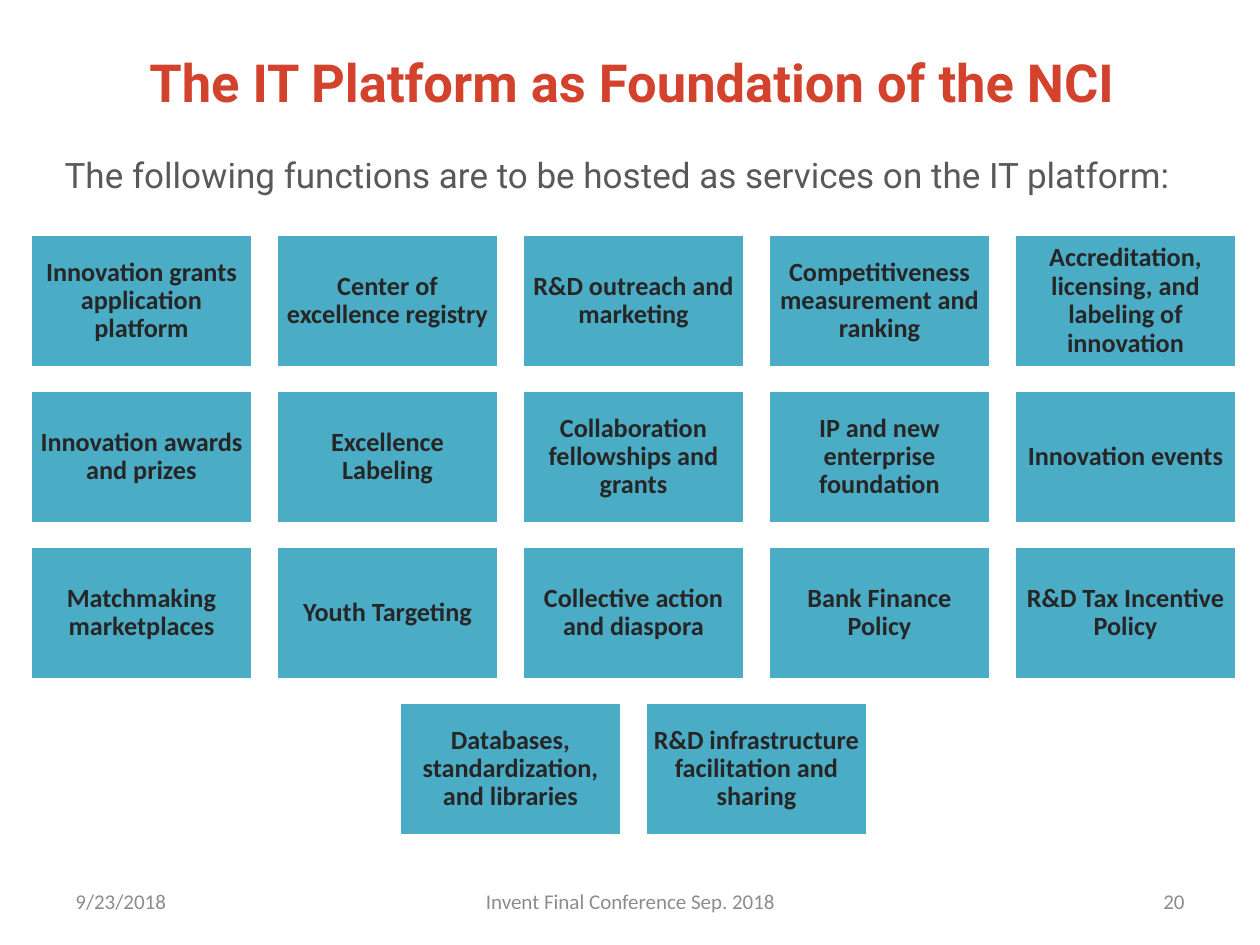
from lxml.etree import SubElement
from pptx import Presentation
from pptx.dml.color import RGBColor
from pptx.enum.shapes import MSO_SHAPE
from pptx.enum.text import MSO_ANCHOR, MSO_AUTO_SIZE, PP_ALIGN
from pptx.oxml.ns import qn
from pptx.util import Pt

TITLE = "The IT Platform as Foundation of the NCI"
INTRO = "The following functions are to be hosted as services on the IT platform:"
SERVICE_ROWS = [
    ["Innovation grants application platform", "Center of excellence registry",
     "R&D outreach and marketing", "Competitiveness measurement and ranking",
     "Accreditation, licensing, and labeling of innovation"],
    ["Innovation awards and prizes", "Excellence Labeling",
     "Collaboration fellowships and grants", "IP and new enterprise foundation",
     "Innovation events"],
    ["Matchmaking marketplaces", "Youth Targeting", "Collective action and diaspora",
     "Bank Finance Policy", "R&D Tax Incentive Policy"],
    ["Databases, standardization, and libraries",
     "R&D infrastructure facilitation and sharing"],
]
FOOTERS = [
    ("20", 903, 294, PP_ALIGN.RIGHT),
    ("Invent Final Conference Sep. 2018", 431, 399, PP_ALIGN.CENTER),
    ("9/23/2018", 63, 294, PP_ALIGN.LEFT),
]

RED = RGBColor(0xD2, 0x42, 0x2C)
GRAY = RGBColor(0x59, 0x59, 0x59)
LIGHT_GRAY = RGBColor(0x8C, 0x8C, 0x8C)
DARK = RGBColor(0x26, 0x26, 0x26)
TEAL = RGBColor(0x4B, 0xAC, 0xC6)
WHITE = RGBColor(0xFF, 0xFF, 0xFF)

EMU_PER_PX = 914400 / 126
GRID_LEFT, GRID_TOP = 30, 234
TILE_WIDTH, TILE_HEIGHT = 223, 134
COLUMN_STEP, ROW_STEP = 246, 156
TILE_INSET = 8


def px(length):
    return round(length * EMU_PER_PX)


def place(shape, left, top, width, height):
    shape.left, shape.top = px(left), px(top)
    shape.width, shape.height = px(width), px(height)


def write_text(shape, text, size, color, font="Calibri", bold=False,
               align=PP_ALIGN.CENTER, anchor=MSO_ANCHOR.MIDDLE,
               inset=None, line_spacing=None, space_before=0):
    frame = shape.text_frame
    frame.word_wrap = True
    frame.auto_size = MSO_AUTO_SIZE.NONE
    frame.vertical_anchor = anchor
    if inset is not None:
        frame.margin_left = frame.margin_right = px(inset)
        frame.margin_top = frame.margin_bottom = px(inset)
    paragraph = frame.paragraphs[0]
    paragraph.alignment = align
    paragraph.line_spacing = line_spacing
    paragraph.space_before = Pt(space_before)
    run = paragraph.add_run()
    run.text = text
    run.font.name = font
    run.font.size = Pt(size)
    run.font.bold = bold
    run.font.color.rgb = color
    return paragraph


def remove_bullet(paragraph):
    properties = paragraph._p.get_or_add_pPr()
    properties.set("marL", "0")
    properties.set("indent", "0")
    SubElement(properties, qn("a:buNone"))


def add_tile(shapes, text, left, top):
    tile = shapes.add_shape(MSO_SHAPE.RECTANGLE, px(left), px(top),
                            px(TILE_WIDTH), px(TILE_HEIGHT))
    tile.shadow.inherit = False
    tile.fill.solid()
    tile.fill.fore_color.rgb = TEAL
    tile.line.color.rgb = WHITE
    tile.line.width = Pt(2)
    write_text(tile, text, 15, DARK, bold=True, inset=TILE_INSET, line_spacing=0.9)


def main():
    presentation = Presentation()
    presentation.slide_width, presentation.slide_height = px(1260), px(945)
    slide = presentation.slides.add_slide(presentation.slide_layouts[1])

    title, body = slide.shapes.title, slide.placeholders[1]
    place(title, 50, 44, 1164, 102)
    write_text(title, TITLE, 30, RED, font="Roboto", bold=True, anchor=MSO_ANCHOR.TOP)
    place(body, 52, 147, 1163, 687)
    remove_bullet(write_text(body, INTRO, 20, GRAY, font="Roboto", align=PP_ALIGN.JUSTIFY,
                             anchor=MSO_ANCHOR.TOP, space_before=6))

    tiles = slide.shapes.add_group_shape().shapes
    columns = max(len(services) for services in SERVICE_ROWS)
    for row, services in enumerate(SERVICE_ROWS):
        row_left = GRID_LEFT + (columns - len(services)) * COLUMN_STEP / 2
        for column, service in enumerate(services):
            add_tile(tiles, service, row_left + column * COLUMN_STEP,
                     GRID_TOP + row * ROW_STEP)

    for text, left, width, align in FOOTERS:
        footer = slide.shapes.add_textbox(px(left), px(876), px(width), px(50))
        write_text(footer, text, 12, LIGHT_GRAY, align=align)

    presentation.save("out.pptx")


if __name__ == "__main__":
    main()
